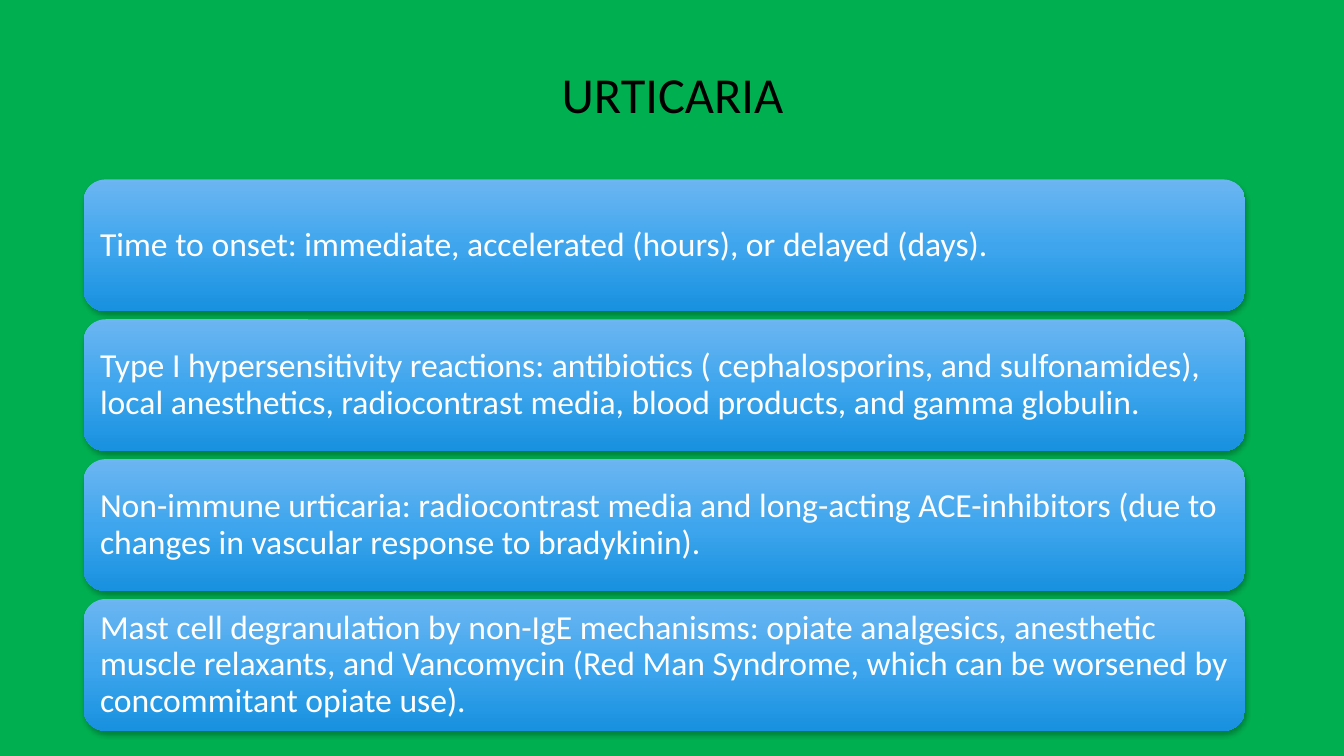
from copy import deepcopy
from dataclasses import dataclass

from lxml import etree
from pptx import Presentation, util as u
from pptx.dml.color import RGBColor
from pptx.enum import shapes, text
from pptx.oxml.ns import qn


@dataclass(frozen=True)
class Theme:
    """Colours, font and type sizes of the slide."""
    background: str = "00B050"
    title_color: str = "000000"
    card_text: str = "FFFFFF"
    card_gradient: tuple = ("6CB6F1", "3FA6EE", "1891DF")
    shadow: str = "000000"
    font: str = "Calibri"
    title_size: int = 36
    card_size: int = 24


THEME = Theme()

FACTS = [
    "Time to onset: immediate, accelerated (hours), or delayed (days).",
    "Type I hypersensitivity reactions: antibiotics ( cephalosporins, and sulfonamides), "
    "local anesthetics, radiocontrast media, blood products, and gamma globulin.",
    "Non-immune urticaria: radiocontrast media and long-acting ACE-inhibitors "
    "(due to changes in vascular response to bradykinin).",
    "Mast cell degranulation by non-IgE mechanisms: opiate analgesics, anesthetic muscle "
    "relaxants, and Vancomycin (Red Man Syndrome, which can be worsened by concommitant "
    "opiate use).",
]


def write(frame, words, size, color, align):
    """Set one vertically centred paragraph in a text frame."""
    frame.word_wrap = True
    frame.auto_size = text.MSO_AUTO_SIZE.NONE
    frame.vertical_anchor = text.MSO_ANCHOR.MIDDLE
    paragraph = frame.paragraphs[0]
    paragraph.alignment = align
    paragraph.line_spacing = 0.9
    run = paragraph.add_run()
    run.text = words
    run.font.name = THEME.font
    run.font.size = u.Pt(size)
    run.font.color.rgb = RGBColor.from_string(color)


def fill_gradient(card):
    """Fill a card from top to bottom with the theme gradient."""
    card.fill.gradient()
    card.fill.gradient_angle = 270
    stop_list = card._element.spPr.find(".//" + qn("a:gsLst"))
    stop_list.insert(1, deepcopy(stop_list[0]))
    last = len(THEME.card_gradient) - 1
    for index, stop in enumerate(card.fill.gradient_stops):
        stop.position = index / last
        stop.color.rgb = RGBColor.from_string(THEME.card_gradient[index])


def cast_shadow(card):
    """Give a card a soft shadow below it."""
    card.shadow.inherit = False
    effects = card._element.spPr.find(qn("a:effectLst"))
    shadow = etree.SubElement(effects, qn("a:outerShdw"), blurRad=str(u.Pt(4)),
                              dist=str(u.Pt(2)), dir="5400000", rotWithShape="0")
    color = etree.SubElement(shadow, qn("a:srgbClr"), val=THEME.shadow)
    etree.SubElement(color, qn("a:alpha"), val="28000")


def place_title(slide, left, top, width, height):
    """Place the slide title in the given box."""
    title = slide.shapes.title
    title.left, title.top, title.width, title.height = map(
        u.Inches, (left, top, width, height))
    write(title.text_frame, "URTICARIA", THEME.title_size, THEME.title_color,
          text.PP_ALIGN.CENTER)


def place_cards(slide, left, top, width, height, gap=0.08):
    """Stack one equal card per fact in the given box."""
    card_height = (height - gap * (len(FACTS) - 1)) / len(FACTS)
    for index, fact in enumerate(FACTS):
        card_top = top + index * (card_height + gap)
        card = slide.shapes.add_shape(
            shapes.MSO_SHAPE.ROUNDED_RECTANGLE,
            *map(u.Inches, (left, card_top, width, card_height)))
        fill_gradient(card)
        card.line.fill.background()
        cast_shadow(card)
        frame = card.text_frame
        frame.margin_left = frame.margin_right = u.Inches(0.1)
        frame.margin_top = frame.margin_bottom = u.Inches(0.1)
        write(frame, fact, THEME.card_size, THEME.card_text, text.PP_ALIGN.LEFT)


def main():
    """Build and save the slide."""
    deck = Presentation()
    deck.slide_width, deck.slide_height = u.Inches(13.33), u.Inches(7.5)
    slide = deck.slides.add_slide(deck.slide_layouts[5])
    slide.background.fill.solid()
    slide.background.fill.fore_color.rgb = RGBColor.from_string(THEME.background)
    place_title(slide, 2.42, 0.5, 8.5, 0.92)
    place_cards(slide, 0.83, 1.78, 11.52, 5.47)
    deck.save("out.pptx")


if __name__ == "__main__":
    main()
